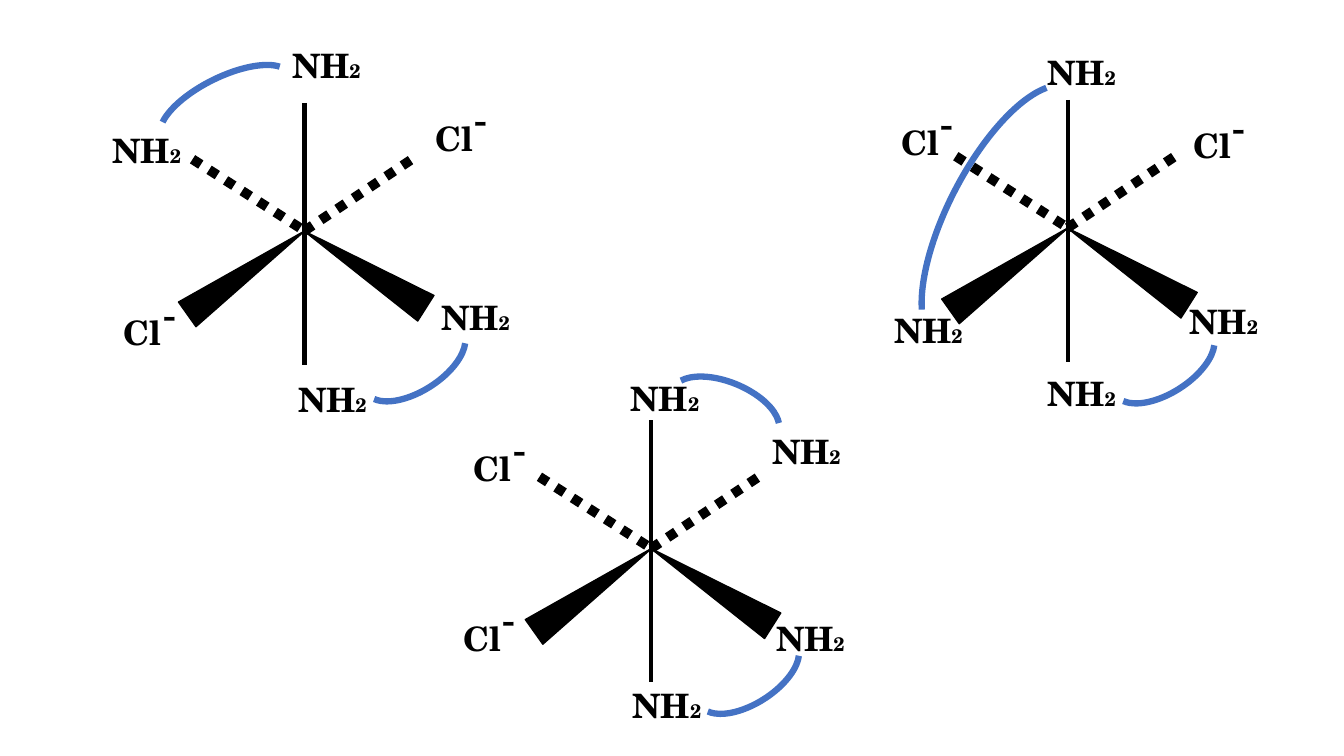
"""Draw three octahedral complexes with chloride and bidentate amine ligands."""
from dataclasses import dataclass

from lxml import etree
from pptx import Presentation
from pptx.dml.color import RGBColor
from pptx.enum.dml import MSO_LINE
from pptx.enum.shapes import MSO_CONNECTOR, MSO_SHAPE
from pptx.enum.text import MSO_AUTO_SIZE
from pptx.oxml.ns import qn
from pptx.util import Inches, Pt

STRAIGHT = MSO_CONNECTOR.STRAIGHT
TRIANGLE = MSO_SHAPE.ISOSCELES_TRIANGLE
ARC = MSO_SHAPE.ARC
DOTTED = MSO_LINE.ROUND_DOT
FIT_TEXT = MSO_AUTO_SIZE.SHAPE_TO_FIT_TEXT
BLACK = RGBColor(0x00, 0x00, 0x00)
BLUE = RGBColor(0x44, 0x72, 0xC4)
FONT = "TeX Gyre Schola"
SHORT_SWEEP = (169.125, 48.372)
LONG_SWEEP = (170.337, 48.521)


@dataclass
class Chelate:
    """Place, turn and sweep of the arc that joins two amines."""

    left: float
    top: float
    rotation: float
    width: float = 0.57
    height: float = 1.13
    sweep: tuple = SHORT_SWEEP


@dataclass
class Complex:
    """Metal centre, ligand label corners and chelate arcs of one isomer."""

    metal: tuple
    amines: list
    chlorides: list
    chelates: list


COMPLEXES = [
    Complex(
        metal=(3.02, 2.29),
        amines=[(2.8, 0.4), (4.28, 2.9), (1.02, 1.24), (2.86, 3.71)],
        chlorides=[(4.22, 1.12), (1.13, 3.05)],
        chelates=[Chelate(3.83, 3.03, 57.4),
                  Chelate(1.95, 0.34, 243.6, height=1.42)],
    ),
    Complex(
        metal=(6.46, 5.44),
        amines=[(6.18, 6.75), (7.56, 4.23), (7.6, 6.08), (6.16, 3.7)],
        chlorides=[(4.6, 4.39), (4.5, 6.08)],
        chelates=[Chelate(7.14, 6.13, 57.4), Chelate(6.91, 3.51, 292.3)],
    ),
    Complex(
        metal=(10.59, 2.26),
        amines=[(11.7, 2.94), (8.77, 3.03), (10.29, 0.47), (10.29, 3.65)],
        chlorides=[(11.74, 1.19), (8.84, 1.16)],
        chelates=[Chelate(11.26, 3.05, 57.4),
                  Chelate(9.41, 0.71, 207.4, 1.1, 2.86, LONG_SWEEP)],
    ),
]


def add_text(shapes, text, left, top, width, height, size=24, subscript="", subscript_size=14):
    """Add a bold label with an optional smaller ending."""
    label = shapes.add_textbox(Inches(left), Inches(top), Inches(width), Inches(height))
    frame = label.text_frame
    frame.word_wrap = True
    frame.auto_size = FIT_TEXT
    for part, points in ((text, size), (subscript, subscript_size)):
        if part:
            run = frame.paragraphs[0].add_run()
            run.text = part
            run.font.name = FONT
            run.font.size = Pt(points)
            run.font.bold = True
            run.font.color.rgb = BLACK


def add_bond(shapes, start, end, weight, dash=None):
    """Add a straight bond between two points."""
    bond = shapes.add_connector(STRAIGHT, *(Inches(value) for value in (*start, *end)))
    bond.line.color.rgb = BLACK
    bond.line.width = Pt(weight)
    if dash:
        bond.line.dash_style = dash
    etree.SubElement(bond._element.spPr, qn("a:effectLst"))


def add_wedge(shapes, left, top, rotation):
    """Add a solid wedge bond that points at the metal."""
    wedge = shapes.add_shape(TRIANGLE, Inches(left), Inches(top), Inches(0.3), Inches(1.43))
    wedge.rotation = rotation
    wedge.shadow.inherit = False
    wedge.fill.solid()
    wedge.fill.fore_color.rgb = BLACK
    wedge.line.color.rgb = BLACK
    wedge.line.width = Pt(1)


def add_skeleton(slide, metal):
    """Add the six bonds around a metal centre as one group."""
    x, y = metal
    bonds = slide.shapes.add_group_shape().shapes
    add_bond(bonds, (x, y - 1.27), (x, y + 1.33), 3)
    add_wedge(bonds, x - 0.73, y - 0.3, 54.6)
    add_wedge(bonds, x + 0.45, y - 0.33, 302.4)
    add_bond(bonds, metal, (x + 1.11, y - 0.74), 7, DOTTED)
    add_bond(bonds, (x - 1.11, y - 0.71), metal, 7, DOTTED)


def add_chloride(slide, left, top):
    """Add a chloride symbol grouped with its raised charge."""
    ion = slide.shapes.add_group_shape().shapes
    add_text(ion, "Cl", left, top, 0.67, 0.5)
    add_text(ion, "ｰ", left + 0.39, top - 0.09, 0.32, 0.4, size=18)


def add_chelate(slide, chelate):
    """Add the blue arc of a bidentate ligand."""
    arc = slide.shapes.add_shape(ARC, Inches(chelate.left), Inches(chelate.top),
                                 Inches(chelate.width), Inches(chelate.height))
    arc.adjustments[0], arc.adjustments[1] = chelate.sweep
    arc.rotation = chelate.rotation
    arc.shadow.inherit = False
    arc.fill.background()
    arc.line.color.rgb = BLUE
    arc.line.width = Pt(4.5)


def main():
    """Build the slide and save it."""
    deck = Presentation()
    deck.slide_width = Inches(13.33)
    deck.slide_height = Inches(7.5)
    slide = deck.slides.add_slide(deck.slide_layouts[6])
    for isomer in COMPLEXES:
        add_skeleton(slide, isomer.metal)
        for left, top in isomer.amines:
            add_text(slide.shapes, "NH", left, top, 0.97, 0.5, subscript="2")
        for left, top in isomer.chlorides:
            add_chloride(slide, left, top)
        for chelate in isomer.chelates:
            add_chelate(slide, chelate)
    deck.save("out.pptx")


if __name__ == "__main__":
    main()
